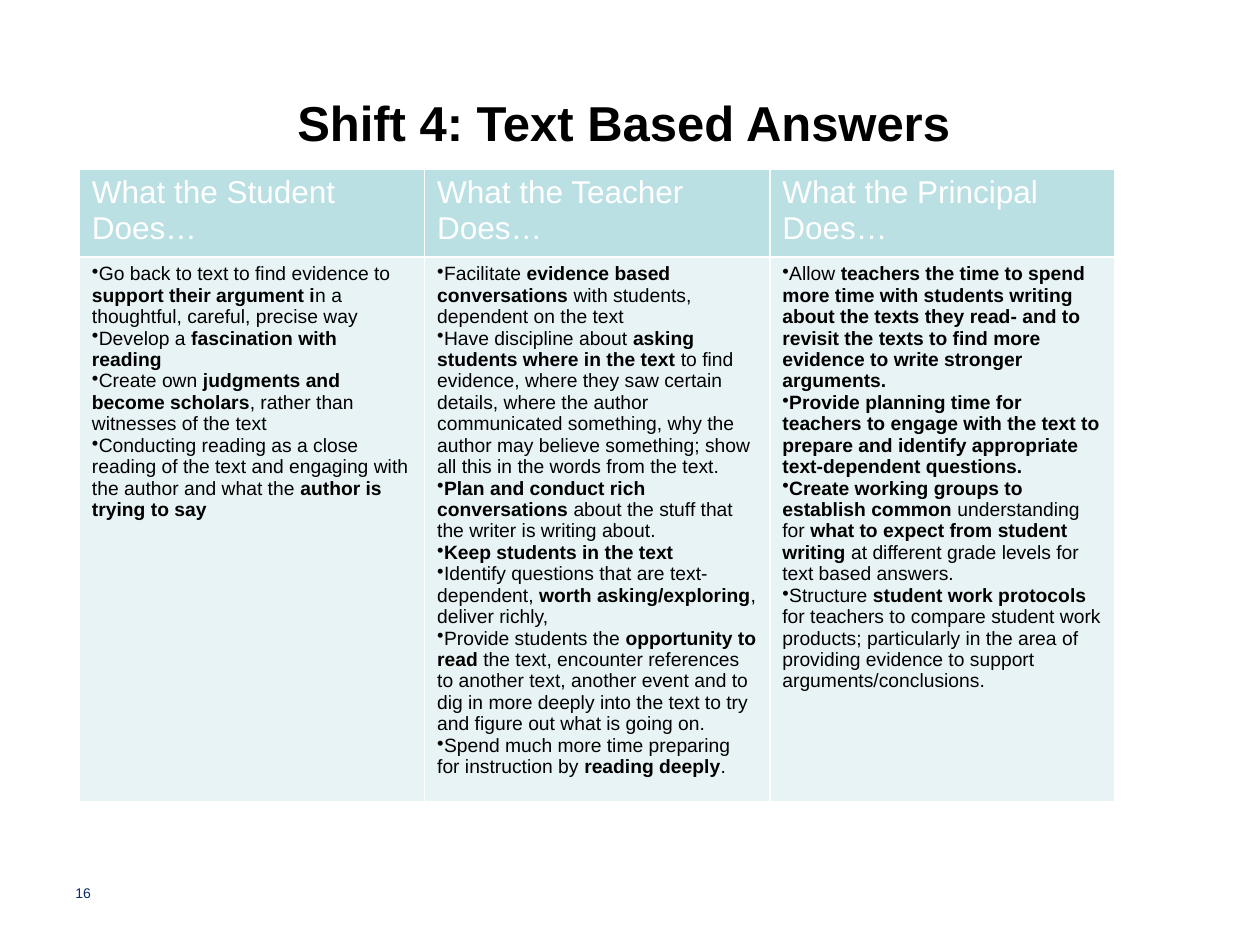
from pptx import Presentation
from pptx.dml.color import RGBColor
from pptx.enum.text import MSO_ANCHOR as Anchor, PP_ALIGN as Align
from pptx.oxml.ns import qn
from pptx.util import Inches, Pt
from lxml.etree import SubElement as Sub

BLACK = RGBColor(0, 0, 0)
WHITE = RGBColor(0xFF, 0xFF, 0xFF)
NAVY = RGBColor(0x0A, 0x2D, 0x6B)
TEAL = RGBColor(0xBB, 0xE0, 0xE3)
PALE = RGBColor(0xE7, 0xF3, 0xF4)

HEADS = [f"What the {who} Does…" for who in ("Student", "Teacher", "Principal")]

# Bold passages stand between asterisks.
POINTS = [
    [
        "Go back to text to find evidence to *support their argument i*n a "
        "thoughtful, careful, precise way",
        "Develop a *fascination with reading*",
        "Create own *judgments and become scholars*, rather than witnesses of the text",
        "Conducting reading as a close reading of the text and engaging with the "
        "author and what the *author is trying to say*",
    ],
    [
        "Facilitate *evidence based conversations *with students, dependent on the text",
        "Have discipline about *asking students where in the text *to find evidence, "
        "where they saw certain details, where the author communicated something, "
        "why the author may believe something; show all this in the words from the text.",
        "*Plan and conduct rich conversations *about the stuff that the writer is "
        "writing about.",
        "*Keep students in the text*",
        "Identify questions that are text-dependent, *worth asking/exploring*, "
        "deliver richly,",
        "Provide students the *opportunity to read *the text, encounter references "
        "to another text, another event and to dig in more deeply into the text to "
        "try and figure out what is going on.",
        "Spend much more time preparing for instruction by *reading deeply*.",
    ],
    [
        "Allow *teachers the time to spend more time with students writing about the "
        "texts they read- and to revisit the texts to find more evidence to write "
        "stronger arguments.*",
        "*Provide planning time for teachers to engage with the text to prepare and "
        "identify appropriate text-dependent questions.*",
        "*Create working groups to establish common *understanding for *what to expect "
        "from student writing *at different grade levels for text based answers.",
        "Structure *student work protocols *for teachers to compare student work "
        "products; particularly in the area of providing evidence to support "
        "arguments/conclusions.",
    ],
]


def add_run(para, text, size, color, bold=False):
    run = para.add_run()
    run.text = text
    font = run.font
    font.name = "Arial"
    font.size = Pt(size)
    font.bold = bold
    font.color.rgb = color


def add_title(slide, text):
    title = slide.shapes.title
    title.left, title.top = Inches(0.45), Inches(0.33)
    title.width, title.height = Inches(9), Inches(1.27)
    frame = title.text_frame
    frame.vertical_anchor = Anchor.MIDDLE
    para = frame.paragraphs[0]
    para.alignment = Align.CENTER
    add_run(para, text, 28, BLACK, True)


def add_point(para, text):
    Sub(para._p.get_or_add_pPr(), qn("a:buChar"), char="•")
    for num, part in enumerate(text.split("*")):
        if part:
            add_run(para, part, 11, BLACK, num % 2 == 1)


def style_cell(cell, fill, base):
    cell.fill.solid()
    cell.fill.fore_color.rgb = fill
    props = cell._tc.get_or_add_tcPr()
    widths = {"a:lnL": 1, "a:lnR": 1, "a:lnT": 1, "a:lnB": base}
    for spot, (tag, width) in enumerate(widths.items()):
        line = Sub(props, qn(tag), w=str(Pt(width)))
        Sub(Sub(line, qn("a:solidFill")), qn("a:srgbClr"), val=str(WHITE))
        props.insert(spot, line)


def add_grid(slide):
    frame = slide.shapes.add_table(
        2, len(HEADS), Inches(0.63), Inches(1.34), Inches(8.22), Inches(5.02))
    table = frame.table
    table.rows[0].height = Inches(0.7)
    table.rows[1].height = Inches(4.32)
    for col, (head, points) in enumerate(zip(HEADS, POINTS)):
        top, body = table.cell(0, col), table.cell(1, col)
        style_cell(top, TEAL, 1)
        style_cell(body, PALE, 1)
        add_run(top.text_frame.paragraphs[0], head, 18, WHITE)
        text = body.text_frame
        for num, point in enumerate(points):
            para = text.add_paragraph() if num else text.paragraphs[0]
            add_point(para, point)


def add_number(slide, text):
    box = slide.shapes.add_textbox(
        Inches(0.5), Inches(6.83), Inches(2.33), Inches(0.52))
    frame = box.text_frame
    frame.word_wrap = True
    frame.vertical_anchor = Anchor.MIDDLE
    add_run(frame.paragraphs[0], text, 8, NAVY)


def main():
    deck = Presentation()
    deck.slide_width, deck.slide_height = Inches(10), Inches(7.5)
    slide = deck.slides.add_slide(deck.slide_layouts[5])
    add_title(slide, "Shift 4: Text Based Answers")
    add_grid(slide)
    add_number(slide, "16")
    deck.save("out.pptx")


if __name__ == "__main__":
    main()
